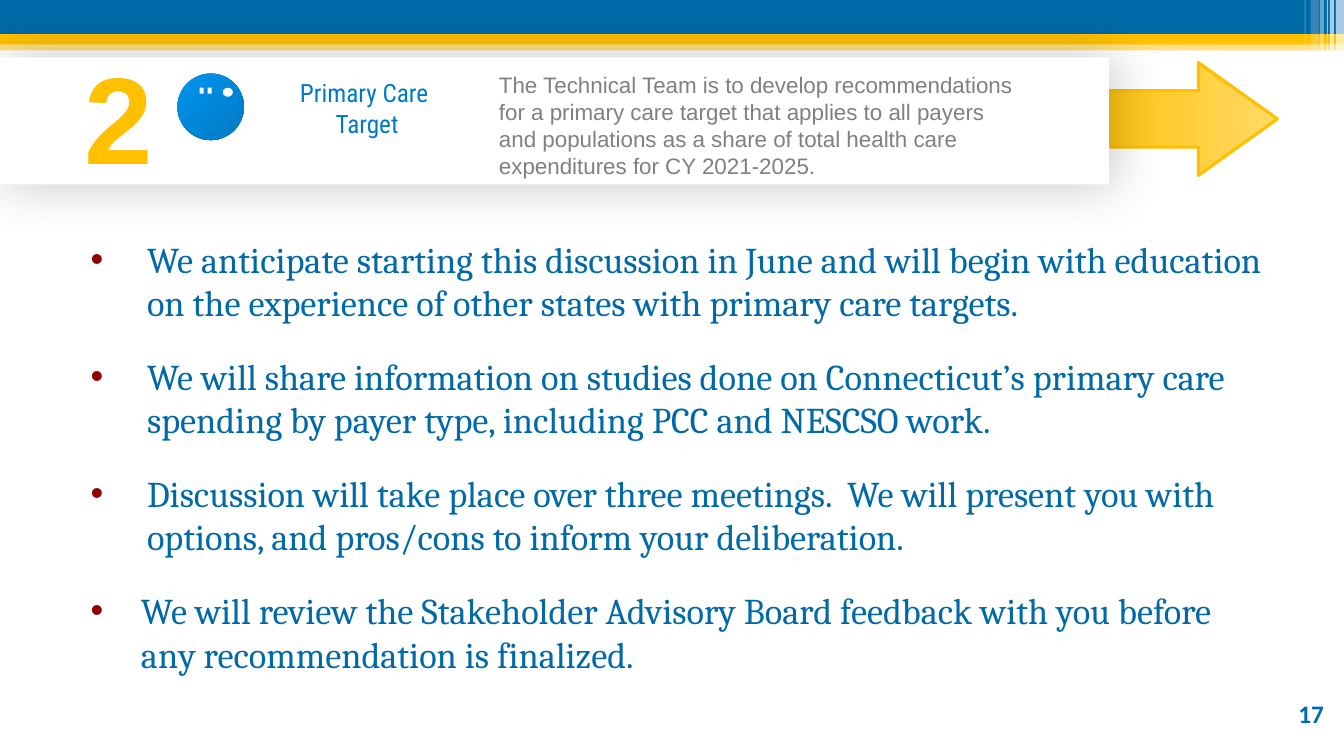
from dataclasses import dataclass
from math import cos, pi, sin

from lxml.etree import SubElement
from pptx import Presentation
from pptx.dml.color import RGBColor
from pptx.enum.shapes import MSO_SHAPE
from pptx.enum.text import MSO_ANCHOR, MSO_AUTO_SIZE, PP_ALIGN
from pptx.oxml.ns import qn
from pptx.util import Inches, Pt


@dataclass(frozen=True)
class Theme:
    blue: str = "0069A7"
    title_blue: str = "007AC4"
    bright_blue: str = "0094EE"
    number_blue: str = "0067B1"
    gold: str = "FFC000"
    pale_gold: str = "FFD966"
    gray: str = "808080"
    white: str = "FFFFFF"
    black: str = "000000"
    bullet_red: str = "900000"
    step_size: float = 88
    body_size: float = 25.9
    label_size: float = 18
    detail_size: float = 16
    heading_font: str = "Roboto Condensed"
    body_font: str = "Cambria"
    plain_font: str = "Arial"
    number_font: str = "Calibri"


def write_text(paragraph, text, *, size, font, color, bold=False,
               align=PP_ALIGN.LEFT, space_before=0):
    run = paragraph.add_run()
    run.text = text
    run.font.size = Pt(size)
    run.font.name = font
    run.font.bold = bold
    run.font.color.rgb = RGBColor.from_string(color)
    paragraph.alignment = align
    paragraph.space_before = Pt(space_before)


def add_bullet(paragraph, color, margin, hanging):
    properties = paragraph._p.get_or_add_pPr()
    properties.set("marL", str(Inches(margin)))
    properties.set("indent", str(-Inches(hanging)))
    bullet_color = SubElement(properties, qn("a:buClr"))
    SubElement(bullet_color, qn("a:srgbClr"), val=color)
    SubElement(properties, qn("a:buFont"), typeface="Arial")
    SubElement(properties, qn("a:buChar"), char="•")


def arc(center_x, center_y, radius_x, radius_y, steps=12):
    angles = [pi - pi * step / steps for step in range(steps + 1)]
    return [(center_x + radius_x * cos(a), center_y + radius_y * sin(a)) for a in angles]


class SlideBuilder:
    def __init__(self, slide, theme):
        self.slide = slide
        self.theme = theme

    def shape(self, left, top, width, height, color, kind=MSO_SHAPE.RECTANGLE, opacity=100):
        shape = self.slide.shapes.add_shape(
            kind, Inches(left), Inches(top), Inches(width), Inches(height))
        shape.shadow.inherit = False
        shape.line.fill.background()
        shape.fill.solid()
        shape.fill.fore_color.rgb = RGBColor.from_string(color)
        if opacity < 100:
            fill_color = shape._element.spPr.find(qn("a:solidFill"))[0]
            SubElement(fill_color, qn("a:alpha"), val=str(opacity * 1000))
        return shape

    def gradient(self, shape, stops, angle):
        shape.fill.gradient()
        shape.fill.gradient_angle = angle
        for stop, (position, color) in zip(shape.fill.gradient_stops, stops):
            stop.position = position
            stop.color.rgb = RGBColor.from_string(color)

    def outline(self, shape, color, width):
        shape.line.color.rgb = RGBColor.from_string(color)
        shape.line.width = Pt(width)

    def soft_shadow(self, shape, opacity, blur, distance):
        effects = shape._element.spPr.find(qn("a:effectLst"))
        shadow = SubElement(effects, qn("a:outerShdw"), blurRad=str(Pt(blur)),
                            dist=str(Pt(distance)), dir="0", algn="ctr", rotWithShape="0")
        shadow_color = SubElement(shadow, qn("a:srgbClr"), val=self.theme.black)
        SubElement(shadow_color, qn("a:alpha"), val=str(opacity * 1000))

    def strokes(self, paths, color, width):
        builder = self.slide.shapes.build_freeform(*paths[0][0], scale=Inches(1))
        for index, points in enumerate(paths):
            if index:
                builder.move_to(*points[0])
            builder.add_line_segments(points[1:], close=False)
        drawing = builder.convert_to_shape()
        drawing.shadow.inherit = False
        drawing.fill.background()
        self.outline(drawing, color, width)

    def text_box(self, left, top, width, height, wrap=True, anchor=MSO_ANCHOR.TOP):
        box = self.slide.shapes.add_textbox(
            Inches(left), Inches(top), Inches(width), Inches(height))
        box.text_frame.word_wrap = wrap
        box.text_frame.vertical_anchor = anchor
        return box.text_frame

    def text(self, text, left, top, width, height, wrap=True, anchor=MSO_ANCHOR.TOP, **style):
        frame = self.text_box(left, top, width, height, wrap, anchor)
        write_text(frame.paragraphs[0], text, **style)

    def title(self, lines, left, top, width, height, **style):
        title = self.slide.shapes.title
        title.element.getparent().append(title.element)
        title.left, title.top = Inches(left), Inches(top)
        title.width, title.height = Inches(width), Inches(height)
        frame = title.text_frame
        frame.auto_size = MSO_AUTO_SIZE.NONE
        frame.word_wrap = False
        frame.vertical_anchor = MSO_ANCHOR.TOP
        for index, line in enumerate(lines):
            paragraph = frame.add_paragraph() if index else frame.paragraphs[0]
            write_text(paragraph, line, **style)

    def bullets(self, items, left, top, width, height, gap, **style):
        frame = self.text_box(left, top, width, height)
        for index, (text, margin, hanging) in enumerate(items):
            paragraph = frame.add_paragraph() if index else frame.paragraphs[0]
            add_bullet(paragraph, self.theme.bullet_red, margin, hanging)
            write_text(paragraph, text, space_before=gap if index else 0, **style)


def draw_header(builder):
    theme = builder.theme
    builder.shape(0, 0.4, 13.33, 0.1, theme.gold, opacity=50)
    builder.shape(0, 0, 13.33, 0.34, theme.blue)
    builder.shape(0, 0.34, 13.33, 0.1, theme.gold)
    for left, top, width, height in [(7.88, 0.54, 4.47, 0.03), (10.75, 0.64, 2.33, 0.04)]:
        builder.shape(left, top, width, height, theme.white, MSO_SHAPE.ROUNDED_RECTANGLE)
    stripes = [(13.25, 0.08, 0.68, 65), (13.19, 0.04, 0.68, 65), (13.16, 0.01, 0.68, 60),
               (13.09, 0.04, 0.68, 40), (13, 0.08, 0.64, 20), (12.94, 0.01, 0.64, 30)]
    for left, width, height, opacity in stripes:
        builder.shape(left, 0, width, height, theme.white, opacity=opacity)


def draw_stethoscope(builder):
    theme = builder.theme
    disc = builder.shape(1.76, 0.73, 0.66, 0.66, theme.title_blue, MSO_SHAPE.OVAL)
    builder.gradient(disc, [(0, theme.bright_blue), (1, theme.title_blue)], 315)
    cup = [(1.99, 0.9), (1.94, 0.92), (1.92, 0.96), *arc(2.03, 1.05, 0.11, 0.09),
           (2.14, 0.96), (2.12, 0.92), (2.07, 0.9)]
    tube = [(2.03, 1.14), *arc(2.15, 1.17, 0.11, 0.09), (2.26, 0.95)]
    builder.strokes([cup, arc(2.03, 1.04, 0.11, 0.06), tube], theme.white, 1.5)
    for left in (1.98, 2.06):
        builder.shape(left, 0.87, 0.04, 0.06, theme.white, MSO_SHAPE.ROUNDED_RECTANGLE)
    builder.shape(2.21, 0.87, 0.1, 0.09, theme.white, MSO_SHAPE.OVAL)


def main():
    presentation = Presentation()
    presentation.slide_width, presentation.slide_height = Inches(13.33), Inches(7.5)
    theme = Theme()
    builder = SlideBuilder(presentation.slides.add_slide(presentation.slide_layouts[5]), theme)

    draw_header(builder)
    builder.bullets([
        ("We anticipate starting this discussion in June and will begin with education "
         "on the experience of other states with primary care targets.", 0.69, 0.56),
        ("We will share information on studies done on Connecticut’s primary care "
         "spending by payer type, including PCC and NESCSO work.", 0.69, 0.56),
        ("Discussion will take place over three meetings.  We will present you with "
         "options, and pros/cons to inform your deliberation.", 0.69, 0.56),
        ("We will review the Stakeholder Advisory Board feedback with you before "
         "any recommendation is finalized.", 0.63, 0.5),
    ], 0.67, 2.3, 12, 4.5, gap=21.5, size=theme.body_size, font=theme.body_font,
        color=theme.blue)
    builder.text("17", 12.67, 6.88, 0.56, 0.4, anchor=MSO_ANCHOR.BOTTOM, bold=True,
                 size=theme.label_size, font=theme.number_font, color=theme.number_blue,
                 align=PP_ALIGN.RIGHT)

    arrow = builder.shape(10.6, 0.62, 2.07, 1.12, theme.gold, MSO_SHAPE.RIGHT_ARROW)
    arrow.adjustments[0], arrow.adjustments[1] = 0.5, 0.7
    builder.gradient(arrow, [(0.01, theme.pale_gold), (1, theme.gold)], 180)
    builder.outline(arrow, theme.gold, 2.25)
    banner = builder.shape(0, 0.57, 11, 1.26, theme.white)
    builder.soft_shadow(banner, opacity=22, blur=37, distance=3)

    builder.text("2", 0.74, 0.36, 0.89, 2.05, wrap=False, size=theme.step_size,
                 font=theme.plain_font, color=theme.gold, bold=True)
    builder.title(["Primary Care ", "Target"], 2.84, 0.72, 1.6, 0.71,
                  size=theme.label_size, font=theme.heading_font,
                  color=theme.title_blue, align=PP_ALIGN.CENTER)
    draw_stethoscope(builder)
    builder.text("The Technical Team is to develop recommendations for a primary care target "
                 "that applies to all payers and populations as a share of total health care "
                 "expenditures for CY 2021-2025.", 4.85, 0.66, 5.42, 1.18,
                 size=theme.detail_size, font=theme.plain_font, color=theme.gray)
    presentation.save("out.pptx")


if __name__ == "__main__":
    main()
